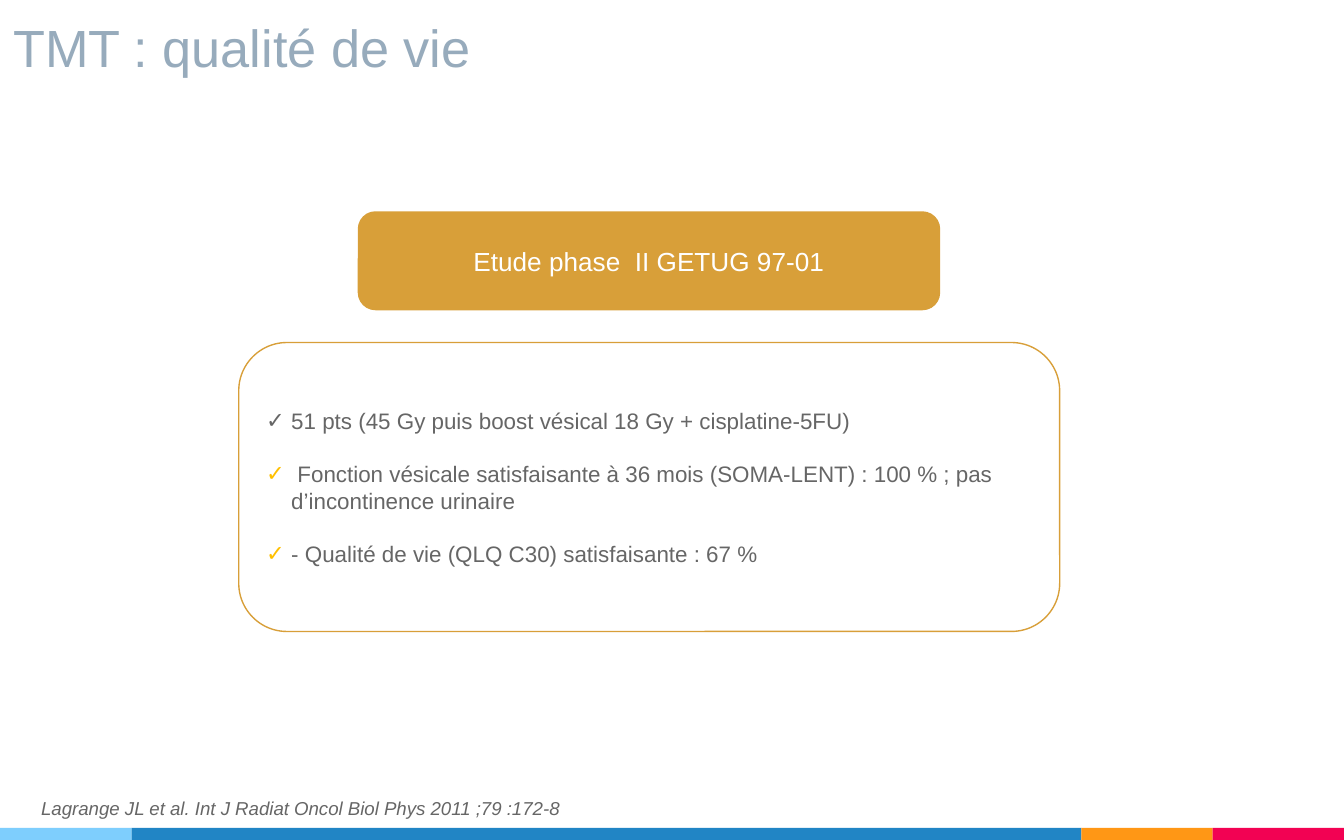
from lxml.etree import SubElement
from pptx import Presentation
from pptx.dml.color import RGBColor
from pptx.enum.shapes import MSO_SHAPE
from pptx.enum.text import MSO_ANCHOR, PP_ALIGN
from pptx.oxml.ns import qn
from pptx.util import Pt

WIDTH, HEIGHT = 720, 450
GOLD, GREY = "D89F39", "666666"
TITLE = "TMT : qualité de vie"
STUDY = "Etude phase  II GETUG 97-01"
FINDINGS = [
    ("51 pts (45 Gy puis boost vésical 18 Gy + cisplatine-5FU)", GREY),
    (" Fonction vésicale satisfaisante à 36 mois (SOMA-LENT) : 100 % ; pas d’incontinence urinaire", "FFC000"),
    ("- Qualité de vie (QLQ C30) satisfaisante : 67 %", "FFC000"),
]
CITATION = "Lagrange JL et al. Int J Radiat Oncol Biol Phys 2011 ;79 :172-8"
BAND_HEIGHT = 6.4
BANDS = [("7ECEFD", 70.5), ("2185C5", 508.8), ("FF9715", 70.35), ("F20253", 70.35)]


def color(value):
    return RGBColor.from_string(value)


def add_panel(slide, kind, box, fill=None, line=None, line_width=0.75):
    shape = slide.shapes.add_shape(kind, *map(Pt, box))
    shape.shadow.inherit = False
    if fill:
        shape.fill.solid()
        shape.fill.fore_color.rgb = color(fill)
    else:
        shape.fill.background()
    if line:
        shape.line.color.rgb = color(line)
        shape.line.width = Pt(line_width)
    else:
        shape.line.fill.background()
    return shape


def prepare_frame(shape, anchor, wrap=True, top=3.6, bottom=3.6):
    frame = shape.text_frame
    frame.word_wrap = wrap
    frame.vertical_anchor = anchor
    frame.margin_left = frame.margin_right = Pt(7.2)
    frame.margin_top, frame.margin_bottom = Pt(top), Pt(bottom)
    return frame


def write(paragraph, text, size=12, fill=GREY, align=PP_ALIGN.LEFT, italic=False):
    paragraph.alignment = align
    run = paragraph.add_run()
    run.text = text
    run.font.name = "Arial"
    run.font.size = Pt(size)
    run.font.italic = italic
    run.font.color.rgb = color(fill)


def add_check(paragraph, fill, indent=13.5):
    properties = paragraph._p.get_or_add_pPr()
    properties.set("marL", str(Pt(indent)))
    properties.set("indent", str(-Pt(indent)))
    bullet_color = SubElement(properties, qn("a:buClr"))
    SubElement(bullet_color, qn("a:srgbClr"), val=fill)
    SubElement(properties, qn("a:buFont"), typeface="Arial")
    SubElement(properties, qn("a:buChar"), char="✓")


presentation = Presentation()
presentation.slide_width, presentation.slide_height = Pt(WIDTH), Pt(HEIGHT)
slide = presentation.slides.add_slide(presentation.slide_layouts[6])

left = 0
for fill, width in BANDS:
    add_panel(slide, MSO_SHAPE.RECTANGLE, (left, HEIGHT - BAND_HEIGHT, width, BAND_HEIGHT), fill)
    left += width

title = slide.shapes.add_textbox(Pt(0), Pt(-7.9), Pt(673), Pt(56.9))
frame = prepare_frame(title, MSO_ANCHOR.BOTTOM, top=7.2, bottom=7.2)
write(frame.paragraphs[0], TITLE, size=28, fill="97ABBC")

study = add_panel(slide, MSO_SHAPE.ROUNDED_RECTANGLE, (192.7, 114.2, 310, 51), GOLD, GOLD, 2)
frame = prepare_frame(study, MSO_ANCHOR.MIDDLE)
write(frame.paragraphs[0], STUDY, size=14, fill="FFFFFF", align=PP_ALIGN.CENTER)

findings = add_panel(slide, MSO_SHAPE.ROUNDED_RECTANGLE, (127.9, 183.5, 439.8, 154.8), line=GOLD)
frame = prepare_frame(findings, MSO_ANCHOR.MIDDLE)
for index, (text, check_fill) in enumerate(FINDINGS):
    paragraph = frame.add_paragraph() if index else frame.paragraphs[0]
    write(paragraph, text)
    if index:
        paragraph.space_before = Pt(14)
    add_check(paragraph, check_fill)

citation = slide.shapes.add_textbox(Pt(10.8), Pt(411.1), Pt(295.9), Pt(38.9))
frame = prepare_frame(citation, MSO_ANCHOR.TOP, wrap=False, top=15.8)
write(frame.paragraphs[0], CITATION, size=10, align=PP_ALIGN.RIGHT, italic=True)

presentation.save("out.pptx")
